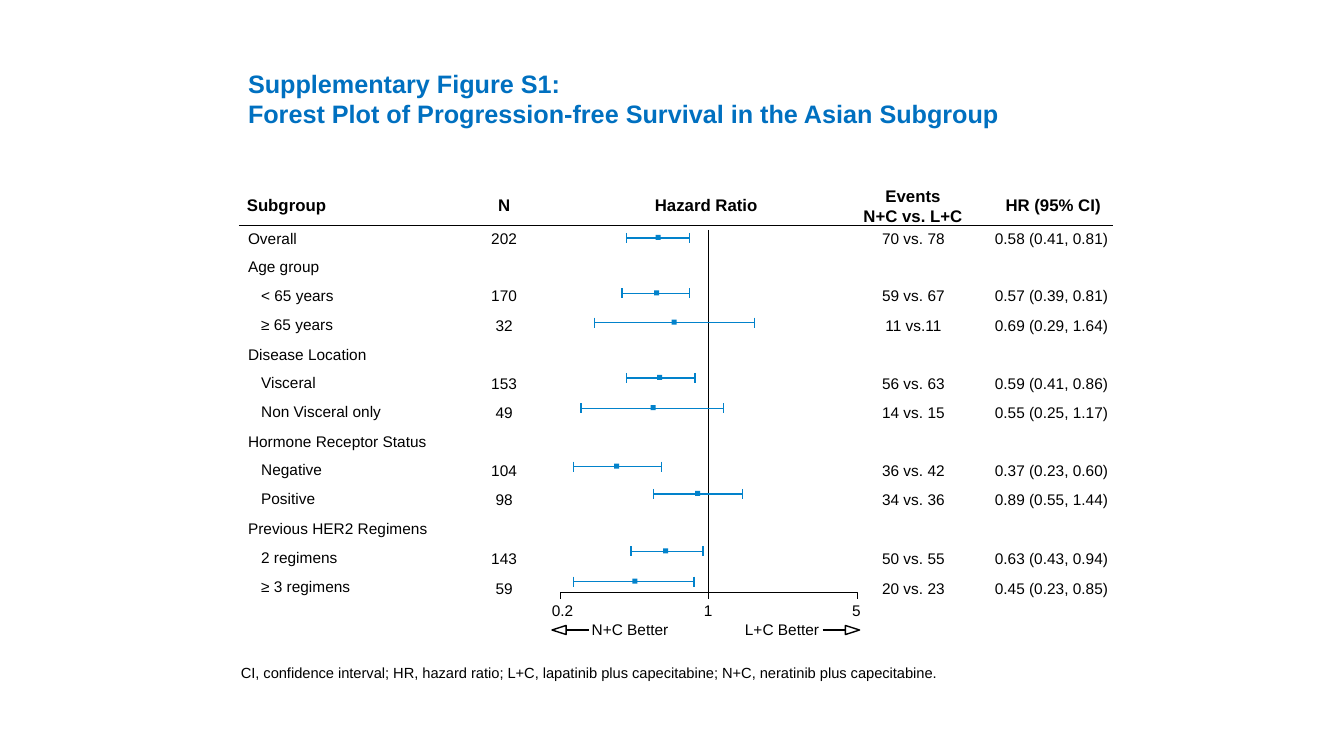
from math import log
from lxml.etree import SubElement
from pptx import Presentation
from pptx.dml.color import RGBColor
from pptx.enum.shapes import MSO_CONNECTOR as Link, MSO_SHAPE as Shape
from pptx.enum.text import MSO_ANCHOR as Anchor, MSO_AUTO_SIZE as AutoSize, PP_ALIGN as Align
from pptx.oxml.ns import qn
from pptx.util import Inches, Pt

BLACK = RGBColor(0x00, 0x00, 0x00)
TITLE_BLUE = RGBColor(0x00, 0x70, 0xC0)
PLOT_BLUE = RGBColor(0x02, 0x82, 0xCB)

COLUMN_WIDTHS = [1.76, 1.76, 2.7, 0.96, 1.78]
ROW_HEIGHTS = [0.28] * 12 + [0.32]
UNITY_X, AXIS_Y, TICK_END = 7.03, 5.88, 5.94
HALF_AXIS = 1.47

SUBGROUPS = [
    ("Overall", "202", "70 vs. 78", (0.58, 0.41, 0.81), 2.36),
    ("Age group",),
    ("< 65 years", "170", "59 vs. 67", (0.57, 0.39, 0.81), 2.91),
    ("≥ 65 years", "32", "11 vs.11", (0.69, 0.29, 1.64), 3.2),
    ("Disease Location",),
    ("Visceral", "153", "56 vs. 63", (0.59, 0.41, 0.86), 3.75),
    ("Non Visceral only", "49", "14 vs. 15", (0.55, 0.25, 1.17), 4.05),
    ("Hormone Receptor Status",),
    ("Negative", "104", "36 vs. 42", (0.37, 0.23, 0.60), 4.63),
    ("Positive", "98", "34 vs. 36", (0.89, 0.55, 1.44), 4.9),
    ("Previous HER2 Regimens",),
    ("2 regimens", "143", "50 vs. 55", (0.63, 0.43, 0.94), 5.47),
    ("≥ 3 regimens", "59", "20 vs. 23", (0.45, 0.23, 0.85), 5.77),
]
HEADINGS = [
    ("Subgroup", 2.35, 1.88, 1, 0.3, Align.LEFT),
    ("N", 4.84, 1.88, 0.32, 0.3, Align.CENTER),
    ("Hazard Ratio", 6.39, 1.88, 1.23, 0.3, Align.CENTER),
    ("Events\nN+C vs. L+C", 8.46, 1.79, 1.19, 0.5, Align.CENTER),
    ("HR (95% CI)", 9.87, 1.88, 1.15, 0.3, Align.CENTER),
]


def ratio_x(ratio):
    """Return the horizontal place of a hazard ratio on the log axis."""
    return UNITY_X + HALF_AXIS * log(ratio) / log(5)


class ForestSlide:
    """Draws the parts of the forest plot on one slide."""

    def __init__(self, slide):
        """Keep the slide and draw straight onto it at first."""
        self.slide = slide
        self.canvas = slide.shapes

    def start_group(self):
        """Send the following shapes into a new group."""
        self.canvas = self.slide.shapes.add_group_shape().shapes

    def end_group(self):
        """Draw straight onto the slide again."""
        self.canvas = self.slide.shapes

    def set_text(self, frame, text, size=11, bold=False, color=BLACK, align=Align.LEFT):
        """Set the text of a frame and format its runs."""
        frame.text = text
        for paragraph in frame.paragraphs:
            paragraph.alignment = align
            for run in paragraph.runs:
                run.font.name = "Arial"
                run.font.size = Pt(size)
                run.font.bold = bold
                run.font.color.rgb = color
            if not paragraph.runs:
                SubElement(paragraph._p, qn("a:endParaRPr"), sz=str(size * 100))

    def title(self, text, left, top, width, height):
        """Place and format the title placeholder."""
        title = self.slide.shapes.title
        title.left, title.top = Inches(left), Inches(top)
        title.width, title.height = Inches(width), Inches(height)
        title.text_frame.vertical_anchor = Anchor.TOP
        title.text_frame.word_wrap = True
        self.set_text(title.text_frame, text, 18, True, TITLE_BLUE)
        title.text_frame.auto_size = AutoSize.NONE

    def label(self, text, left, top, width, height, align=Align.LEFT,
              size=11, bold=False, wrap=False):
        """Add a text box."""
        frame = self.canvas.add_textbox(
            Inches(left), Inches(top), Inches(width), Inches(height)).text_frame
        frame.word_wrap = wrap
        frame.auto_size = AutoSize.SHAPE_TO_FIT_TEXT
        self.set_text(frame, text, size, bold, align=align)

    def line(self, x1, y1, x2, y2, color=BLACK, width=1, kind=Link.STRAIGHT):
        """Add a connector without shadow and return it."""
        line = self.canvas.add_connector(kind, Inches(x1), Inches(y1), Inches(x2), Inches(y2))
        line.line.color.rgb = color
        line.line.width = Pt(width)
        SubElement(line._element.spPr, qn("a:effectLst"))
        return line

    def axis_arm(self, end):
        """Add half of the axis, bent down into its end tick."""
        arm = self.line(6.35, AXIS_Y, end, TICK_END, width=0.5, kind=Link.ELBOW)
        adjustments = arm._element.spPr.find(qn("a:prstGeom")).find(qn("a:avLst"))
        SubElement(adjustments, qn("a:gd"), name="adj1", fmla="val 100000")

    def shape(self, kind, left, top, width, height):
        """Add a preset shape without shadow and return it."""
        shape = self.canvas.add_shape(
            kind, Inches(left), Inches(top), Inches(width), Inches(height))
        shape.shadow.inherit = False
        return shape

    def arrowhead(self, left, rotation):
        """Add a hollow triangle turned to one side."""
        head = self.shape(Shape.ISOSCELES_TRIANGLE, left, 6.18, 0.09, 0.14)
        head.rotation = rotation
        head.fill.background()
        head.line.color.rgb = BLACK
        head.line.width = Pt(1)

    def interval(self, estimate, low, high, y):
        """Add a confidence interval with end caps and its estimate."""
        self.line(ratio_x(low), y, ratio_x(high), y, PLOT_BLUE)
        for bound in (low, high):
            self.line(ratio_x(bound), y - 0.05, ratio_x(bound), y + 0.05, PLOT_BLUE)
        marker = self.shape(Shape.RECTANGLE, ratio_x(estimate) - 0.03, y - 0.03, 0.05, 0.05)
        marker.fill.solid()
        marker.fill.fore_color.rgb = PLOT_BLUE
        marker.line.fill.background()

    def subgroup_table(self):
        """Add the table of subgroups, counts and hazard ratios."""
        table = self.canvas.add_table(
            len(SUBGROUPS), len(COLUMN_WIDTHS), Inches(2.36), Inches(2.22),
            Inches(sum(COLUMN_WIDTHS)), Inches(sum(ROW_HEIGHTS))).table
        table.first_row = table.horz_banding = False
        for column, width in zip(table.columns, COLUMN_WIDTHS):
            column.width = Inches(width)
        for index, (subgroup, height) in enumerate(zip(SUBGROUPS, ROW_HEIGHTS)):
            table.rows[index].height = Inches(height)
            name, *results = subgroup
            texts = [name, "", "", "", ""]
            if results:
                count, events, (estimate, low, high), _ = results
                texts = [name, count, "", events, f"{estimate:.2f} ({low:.2f}, {high:.2f})"]
            for position, text in enumerate(texts):
                cell = table.cell(index, position)
                cell.fill.background()
                cell.vertical_anchor = Anchor.MIDDLE if index else Anchor.BOTTOM
                self.set_text(cell.text_frame, text,
                              align=Align.CENTER if position else Align.LEFT)
            name_cell = table.cell(index, 0)
            if not results:
                name_cell.merge(table.cell(index, 1))
            elif index:
                name_cell.vertical_anchor = Anchor.TOP
                name_cell.margin_left = Inches(0.23)


def main():
    """Build the slide and save it."""
    deck = Presentation()
    deck.slide_width, deck.slide_height = Inches(13.33), Inches(7.5)
    forest = ForestSlide(deck.slides.add_slide(deck.slide_layouts[5]))
    forest.title("Supplementary Figure S1:\n"
                 "Forest Plot of Progression-free Survival in the Asian Subgroup",
                 2.36, 0.63, 7.79, 0.71)
    forest.subgroup_table()

    forest.start_group()
    for end in (ratio_x(5), ratio_x(0.2)):
        forest.axis_arm(end)
    forest.line(UNITY_X, 2.28, UNITY_X, TICK_END, width=0.5)
    for name, *results in SUBGROUPS:
        if results:
            forest.interval(*results[2], results[3])
    for head_left, rotation, tail_left in ((5.5, 270, 5.62), (8.41, 90, 8.16)):
        forest.arrowhead(head_left, rotation)
        forest.line(tail_left, 6.25, tail_left + 0.22, 6.25)
    forest.end_group()

    forest.label("N+C Better", 5.77, 6.1, 0.97, 0.29)
    forest.label("L+C Better", 7.29, 6.1, 0.94, 0.29)
    for text, left, top, width, height, align in HEADINGS:
        forest.label(text, left, top, width, height, align, 12, True)
    for tick, left, width in (("0.2", 5.37, 0.42), ("1", 6.88, 0.29), ("5", 8.35, 0.29)):
        forest.label(tick, left, 5.91, width, 0.29, Align.CENTER)
    forest.line(2.37, 2.24, 11.04, 2.24, width=0.75)
    forest.label("CI, confidence interval; HR, hazard ratio; L+C, lapatinib plus capecitabine; "
                 "N+C, neratinib plus capecitabine.", 2.29, 6.54, 11.03, 0.29,
                 size=10.5, wrap=True)
    deck.save("out.pptx")


if __name__ == "__main__":
    main()
